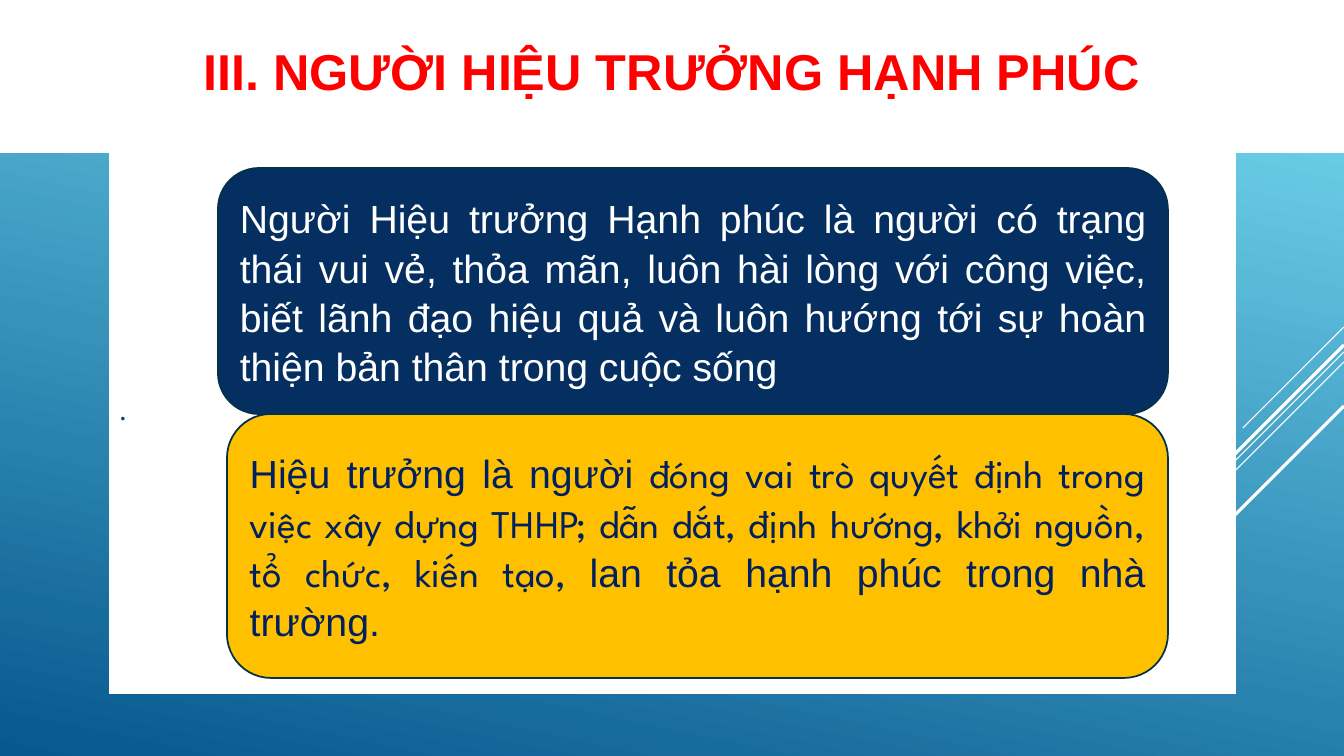
from lxml import etree
from pptx import Presentation
from pptx.dml.color import RGBColor
from pptx.enum.shapes import MSO_CONNECTOR as CONNECTOR, MSO_SHAPE as SHAPE
from pptx.enum.text import MSO_ANCHOR as ANCHOR, PP_ALIGN as ALIGN
from pptx.oxml.ns import qn
from pptx.util import Pt

PX = 914400 / 100.8
WIDTH, HEIGHT = 1344, 756
SANS, ROUNDED = "Arial", "League Spartan"


def px(length):
    return round(length * PX)


def colour(hex_value):
    return RGBColor.from_string(hex_value)


def apply(target, formats):
    for name, value in formats.items():
        setattr(target, name, value)


def add_panel(slide, box, preset, fill, outline=None):
    panel = slide.shapes.add_shape(preset, *map(px, box))
    panel.shadow.inherit = False
    panel.fill.solid()
    panel.fill.fore_color.rgb = colour(fill)
    if outline:
        panel.line.color.rgb = colour(outline)
        panel.line.width = Pt(1.25)
    else:
        panel.line.fill.background()
    return panel


def write(panel, phrases, ink, font, paragraph_format):
    frame = panel.text_frame
    apply(frame, {"word_wrap": True, "vertical_anchor": ANCHOR.MIDDLE})
    paragraph = frame.paragraphs[0]
    apply(paragraph, paragraph_format)
    for wording, typeface in phrases:
        phrase = paragraph.add_run()
        phrase.text = wording
        apply(phrase.font, {"name": typeface, **font})
        phrase.font.color.rgb = colour(ink)


def paint_background(slide):
    backdrop = slide.background.fill
    backdrop.gradient()
    backdrop.gradient_angle = 258
    stops = ((0.1, "6ED2EB"), (1.0, "06588E"))
    for stop, (position, tint) in zip(backdrop.gradient_stops, stops):
        stop.position = position
        stop.color.rgb = colour(tint)


def draw_rays(slide, right_edge):
    rays = ((327, 101, 0.75), (352, 328, 0.75), (362, 209, 0.75),
            (345, 193, 2.25), (406, 140, 2.25))
    for top, reach, weight in rays:
        ends = (right_edge, top, right_edge - reach, top + reach)
        ray = slide.shapes.add_connector(CONNECTOR.STRAIGHT, *map(px, ends))
        ray.line.color.rgb = colour("FFFFFF")
        ray.line.width = Pt(weight)
        etree.SubElement(ray._element.spPr, qn("a:effectLst"))


def draw_title(slide, box):
    title = add_panel(slide, box, SHAPE.RECTANGLE, "FFFFFF")
    write(title, [("III. NGƯỜI HIỆU TRƯỞNG HẠNH PHÚC", SANS)], "FF0000",
          {"size": Pt(36), "bold": True}, {"alignment": ALIGN.CENTER})


def draw_content(slide, box):
    left, top, width, height = box
    content = add_panel(slide, box, SHAPE.RECTANGLE, "FFFFFF")
    write(content, [(".", ROUNDED)], "0F496F", {"size": Pt(20)},
          {"alignment": ALIGN.LEFT, "space_after": Pt(6)})

    definition = [
        ("Người Hiệu trưởng Hạnh phúc là người có trạng thái vui vẻ, thỏa mãn, "
         "luôn hài lòng với công việc, biết lãnh đạo hiệu quả và luôn hướng tới "
         "sự hoàn thiện bản thân trong cuộc sống", SANS)]
    role = [
        ("Hiệu trưởng là người ", SANS),
        ("đóng vai trò quyết định trong việc xây dựng THHP; dẫn dắt, định hướng, "
         "khởi nguồn, tổ chức, kiến tạo, ", ROUNDED),
        ("lan tỏa hạnh phúc trong nhà trường.", SANS)]
    cards = ((109, 43, 246, "052F61", "FFFFFF", definition),
             (118, 289, 264, "FFC000", "002060", role))
    right = left + width - 68
    for indent, drop, depth, fill, ink, phrases in cards:
        card_left = left + indent
        card = add_panel(slide, (card_left, top + drop, right - card_left, depth),
                         SHAPE.ROUNDED_RECTANGLE, fill, "043148")
        write(card, phrases, ink, {"size": Pt(28)},
              {"alignment": ALIGN.JUSTIFY, "line_spacing": 1.05})


def main():
    deck = Presentation()
    apply(deck, {"slide_width": px(WIDTH), "slide_height": px(HEIGHT)})
    slide = deck.slides.add_slide(deck.slide_layouts[6])
    paint_background(slide)
    draw_rays(slide, WIDTH)
    draw_title(slide, (0, -13, WIDTH, 166))
    draw_content(slide, (109, 125, 1127, 569))
    deck.save("out.pptx")


if __name__ == "__main__":
    main()
